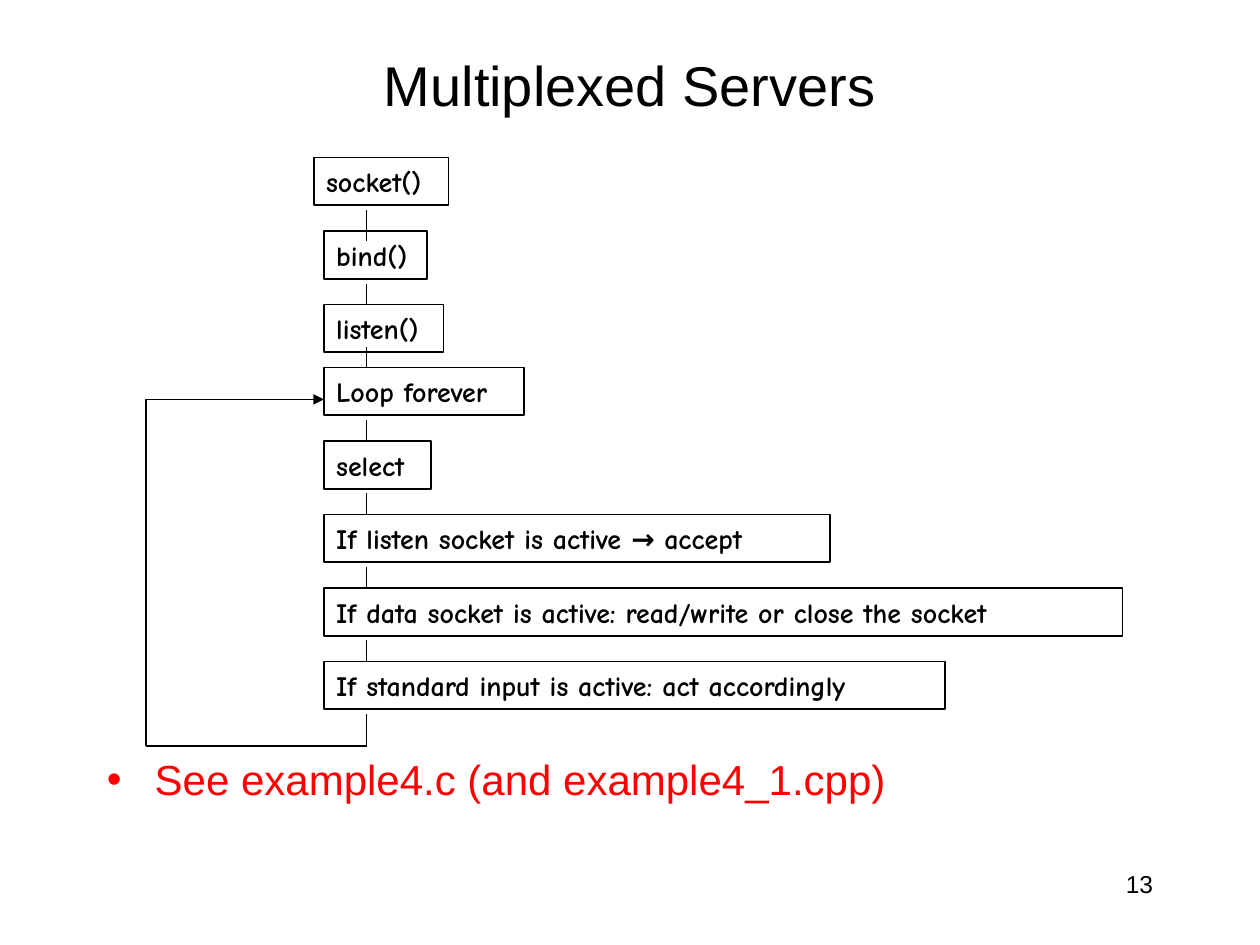
from dataclasses import dataclass

from lxml import etree
from pptx import Presentation
from pptx import util as u
from pptx.dml.color import RGBColor
from pptx.enum import shapes, text
from pptx.oxml.ns import qn

COLORS = {"ink": "000000", "note": "FF0000"}
BODY_FONT, STEP_FONT = "Arial", "Comic Neue"
STEP_LEFT, STEP_HEIGHT = 2.57, 0.38
FIRST_TOP, PITCH, LOOP_LIFT = 1.25, 7 / 12, 1 / 12
LINK_X, LINK_LEAD, LONG_LINK = 2.91, 1 / 6, 0.25
LOOP_X, LOOP_BOTTOM, LOOP_ENTRY = 1.16, 5.92, 3.17


@dataclass
class Step:
    label: str
    width: float
    left: float = STEP_LEFT


@dataclass
class Label:
    words: str
    left: float
    top: float
    width: float
    height: float
    size: int
    align: text.PP_ALIGN = text.PP_ALIGN.LEFT
    color: str = "ink"
    bullet: bool = False


STEPS = [
    Step("socket()", 1.07, 2.49),
    Step("bind()", 0.82),
    Step("listen()", 0.95),
    Step("Loop forever", 1.59),
    Step("select", 0.85),
    Step("If listen socket is active → accept", 4.02),
    Step("If data socket is active: read/write or close the socket", 6.34),
    Step("If standard input is active: act accordingly", 4.93),
]
LOOP_STEP = 3
LABELS = [
    Label("Multiplexed Servers", 0.75, 0.25, 8.5, 0.83, 32, text.PP_ALIGN.CENTER),
    Label("See example4.c (and example4_1.cpp)", 0.75, 5.94, 8.5, 0.48, 24,
          color="note", bullet=True),
    Label("13", 7.17, 6.83, 2.08, 0.36, 14, text.PP_ALIGN.RIGHT),
]


def rgb(name: str) -> RGBColor:
    return RGBColor.from_string(COLORS[name])


def step_top(index: int) -> float:
    """Even pitch, with the loop and all after it lifted a little."""
    return FIRST_TOP + index * PITCH - (LOOP_LIFT if index >= LOOP_STEP else 0)


def write(box, words: str, size: int, font: str, color: str, align, bold=False):
    frame = box.text_frame
    frame.word_wrap = True
    frame.vertical_anchor = text.MSO_ANCHOR.MIDDLE
    para = frame.paragraphs[0]
    para.alignment = align
    span = para.add_run()
    span.text = words
    span.font.size = u.Pt(size)
    span.font.name = font
    span.font.bold = bold
    span.font.color.rgb = rgb(color)
    return para


def add_label(page, label: Label) -> None:
    box = page.shapes.add_textbox(*map(
        u.Inches, (label.left, label.top, label.width, label.height)))
    para = write(box, label.words, label.size, BODY_FONT, label.color, label.align)
    if label.bullet:
        props = para._p.get_or_add_pPr()
        props.set("marL", str(u.Inches(0.38)))
        props.set("indent", str(-u.Inches(0.38)))
        etree.SubElement(props, qn("a:buFont"), typeface=BODY_FONT)
        etree.SubElement(props, qn("a:buChar"), char="•")


def add_step(page, step: Step, top: float) -> None:
    box = page.shapes.add_shape(
        shapes.MSO_SHAPE.RECTANGLE,
        *map(u.Inches, (step.left, top, step.width, STEP_HEIGHT)))
    box.shadow.inherit = False
    box.fill.background()
    box.line.color.rgb = rgb("ink")
    box.line.width = u.Pt(1)
    write(box, step.label, 16, STEP_FONT, "ink", text.PP_ALIGN.LEFT, bold=True)


def add_line(page, start: tuple[float, float], end: tuple[float, float],
             arrow: bool = False) -> None:
    line = page.shapes.add_connector(
        shapes.MSO_CONNECTOR.STRAIGHT, *map(u.Inches, (*start, *end)))
    line.line.color.rgb = rgb("ink")
    line.line.width = u.Pt(0.75)
    if arrow:
        etree.SubElement(line.line._get_or_add_ln(), qn("a:tailEnd"), type="triangle")
    etree.SubElement(line._element.spPr, qn("a:effectLst"))


def main() -> None:
    deck = Presentation()
    deck.slide_width, deck.slide_height = u.Inches(10), u.Inches(7.5)
    page = deck.slides.add_slide(deck.slide_layouts[6])

    for label in LABELS:
        add_label(page, label)
    for index, step in enumerate(STEPS):
        add_step(page, step, step_top(index))
    for index in range(len(STEPS)):
        start = step_top(index + 1) - LINK_LEAD
        length = LONG_LINK if index in (0, len(STEPS) - 1) else LINK_LEAD
        add_line(page, (LINK_X, start), (LINK_X, start + length))

    corners = [(LINK_X, LOOP_BOTTOM), (LOOP_X, LOOP_BOTTOM),
               (LOOP_X, LOOP_ENTRY), (STEP_LEFT, LOOP_ENTRY)]
    for start, end in zip(corners, corners[1:]):
        add_line(page, start, end, arrow=end == corners[-1])

    deck.save("out.pptx")


if __name__ == "__main__":
    main()
